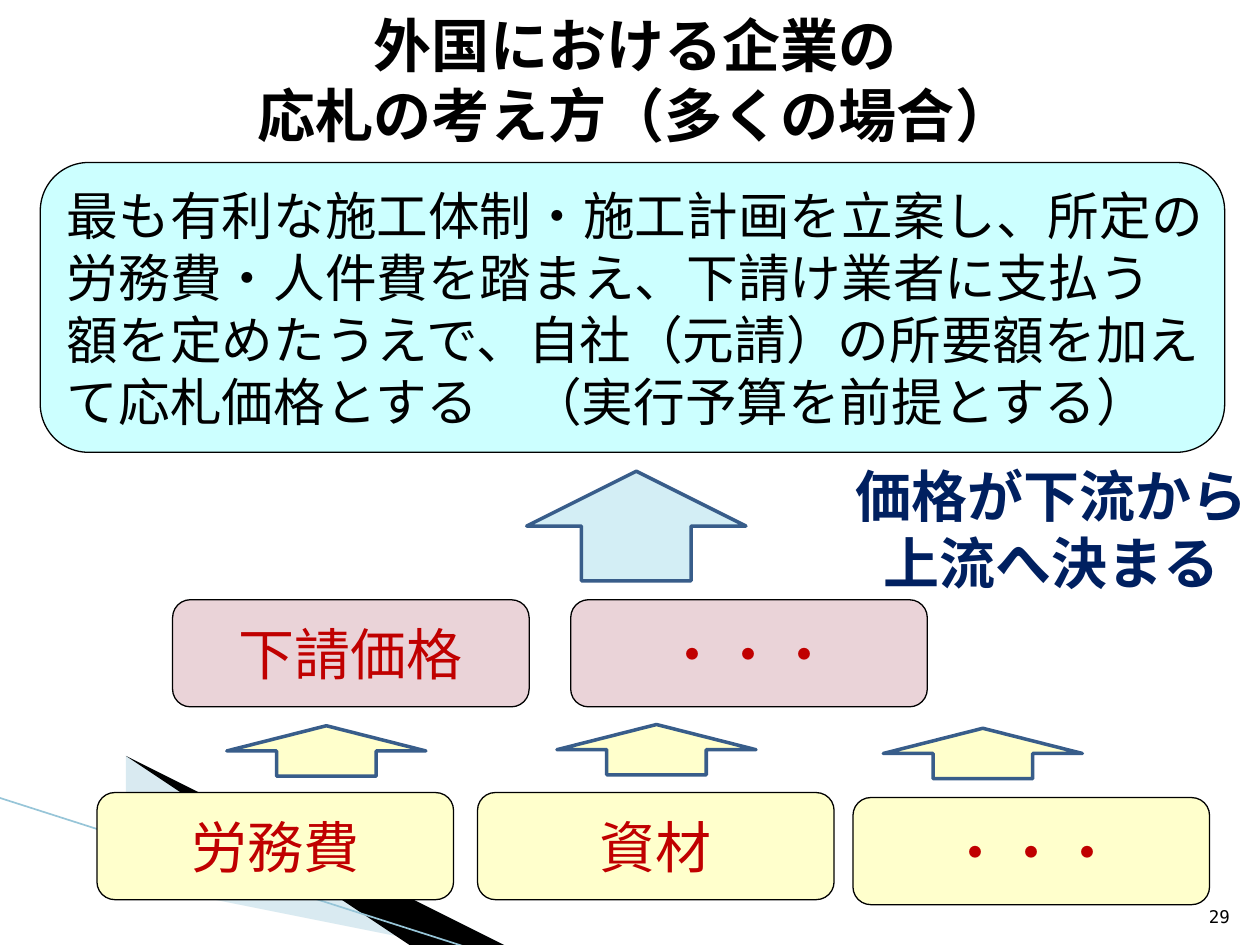
from lxml.etree import SubElement
from pptx import Presentation
from pptx.dml.color import RGBColor
from pptx.enum.shapes import MSO_CONNECTOR, MSO_SHAPE as SHAPE
from pptx.enum.text import MSO_ANCHOR as ANCHOR, PP_ALIGN as ALIGN
from pptx.oxml.ns import qn
from pptx.util import Inches, Pt

BLACK = RGBColor(0x00, 0x00, 0x00)
WHITE = RGBColor(0xFF, 0xFF, 0xFF)
RED = RGBColor(0xC0, 0x00, 0x00)
NAVY = RGBColor(0x00, 0x20, 0x60)
CYAN = RGBColor(0xCC, 0xFF, 0xFF)
PINK = RGBColor(0xEA, 0xD3, 0xD8)
YELLOW = RGBColor(0xFF, 0xFF, 0xCC)
PALE_BLUE = RGBColor(0xD3, 0xEE, 0xF5)
ARROW_LINE = RGBColor(0x38, 0x5D, 0x8A)
SWOOSH = RGBColor(0xA0, 0xCB, 0xDC)
SWOOSH_LINE = RGBColor(0x97, 0xC5, 0xD8)
NOTO, ARIAL, MONO = "Noto Sans CJK JP", "Arial", "DejaVu Sans Mono"

prs = Presentation()
prs.slide_width, prs.slide_height = Inches(10), Inches(7.5)
s = prs.slides.add_slide(prs.slide_layouts[5])
s.background.fill.solid()
s.background.fill.fore_color.rgb = WHITE


def write(sp, lines, size, font, color, bold=False, align=ALIGN.CENTER,
          anchor=ANCHOR.MIDDLE, wrap=False):
    tf = sp.text_frame
    tf.text = "\n".join(lines)
    tf.word_wrap, tf.vertical_anchor = wrap, anchor
    for p in tf.paragraphs:
        p.alignment = align
        for r in p.runs:
            f = r.font
            f.size, f.name, f.bold, f.color.rgb = Pt(size), font, bold, color
            SubElement(r._r.rPr, qn("a:ea")).set("typeface", font)


def add_block(kind, box, fill, line, width):
    sp = s.shapes.add_shape(kind, *map(Inches, box))
    sp.shadow.inherit = False
    sp.fill.solid()
    sp.fill.fore_color.rgb = fill
    sp.line.color.rgb, sp.line.width = line, Pt(width)
    return sp


# Swoosh in the lower left corner
for points, color, alpha in [
    ([(0.55, 6.51), (5.95, 7.51), (4.56, 7.51), (0.55, 6.5)], SWOOSH, 40),
    ([(0.53, 6.49), (4.57, 7.51), (3.72, 7.52), (0.54, 6.5)], BLACK, 100),
]:
    fb = s.shapes.build_freeform(*points[0], scale=Inches(1))
    fb.add_line_segments(points[1:])
    sp = fb.convert_to_shape()
    sp.shadow.inherit = False
    sp.fill.solid()
    sp.fill.fore_color.rgb = color
    sp.line.fill.background()
    if alpha < 100:
        srgb = sp._element.spPr.find(f"{qn('a:solidFill')}/{qn('a:srgbClr')}")
        SubElement(srgb, qn("a:alpha")).set("val", str(alpha * 1000))

edge = s.shapes.add_connector(MSO_CONNECTOR.STRAIGHT, Inches(-0.01), Inches(6.33),
                              Inches(3.71), Inches(7.52))
edge.line.color.rgb, edge.line.width = SWOOSH_LINE, Pt(0.95)
SubElement(edge._element.spPr, qn("a:effectLst"))

# Title
title = s.shapes.title
title.left, title.top, title.width, title.height = map(Inches, (1.9, 0.02, 6.29, 1.22))
write(title, ["外国における企業の", "応札の考え方（多くの場合）"], 33.2, NOTO, BLACK, bold=True)

# Bid policy
policy = add_block(SHAPE.ROUNDED_RECTANGLE, (0.32, 1.29, 9.4, 2.3), CYAN, BLACK, 0.75)
write(policy, ["最も有利な施工体制・施工計画を立案し、所定の",
               "労務費・人件費を踏まえ、下請け業者に支払う",
               "額を定めたうえで、自社（元請）の所要額を加え",
               "て応札価格とする\u3000（実行予算を前提とする）".replace("\u3000", "　")],
      29.5, ARIAL, BLACK, align=ALIGN.LEFT)

# Cost boxes: subcontract row above, resource row below
BOX_W, BOX_H = 2.83, 0.85
for label, x, y, fill in [
    ("下請価格", 1.37, 4.76, PINK),
    ("・・・", 4.53, 4.76, PINK),
    ("労務費", 0.77, 6.29, YELLOW),
    ("資材", 3.79, 6.29, YELLOW),
    ("・・・", 6.77, 6.33, YELLOW),
]:
    sp = add_block(SHAPE.ROUNDED_RECTANGLE, (x, y, BOX_W, BOX_H), fill, BLACK, 0.75)
    write(sp, [label], 32, ARIAL, RED)

# Arrows pointing upstream
for box, fill in [
    ((4.18, 3.74, 1.74, 0.87), PALE_BLUE),
    ((1.8, 5.76, 1.58, 0.4), YELLOW),
    ((4.42, 5.75, 1.58, 0.4), YELLOW),
    ((7.01, 5.78, 1.58, 0.4), YELLOW),
]:
    add_block(SHAPE.DOWN_ARROW, box, fill, ARROW_LINE, 2).rotation = 180

# Side remark and page number
remark = s.shapes.add_textbox(*map(Inches, (6.67, 3.61, 3.36, 1.18)))
write(remark, ["価格が下流から", "上流へ決まる"], 32, NOTO, NAVY, bold=True, anchor=ANCHOR.TOP)

number = s.shapes.add_textbox(*map(Inches, (9.46, 7.01, 0.4, 0.4)))
write(number, ["29"], 10, MONO, BLACK, align=ALIGN.RIGHT, anchor=ANCHOR.BOTTOM, wrap=True)

prs.save("out.pptx")
